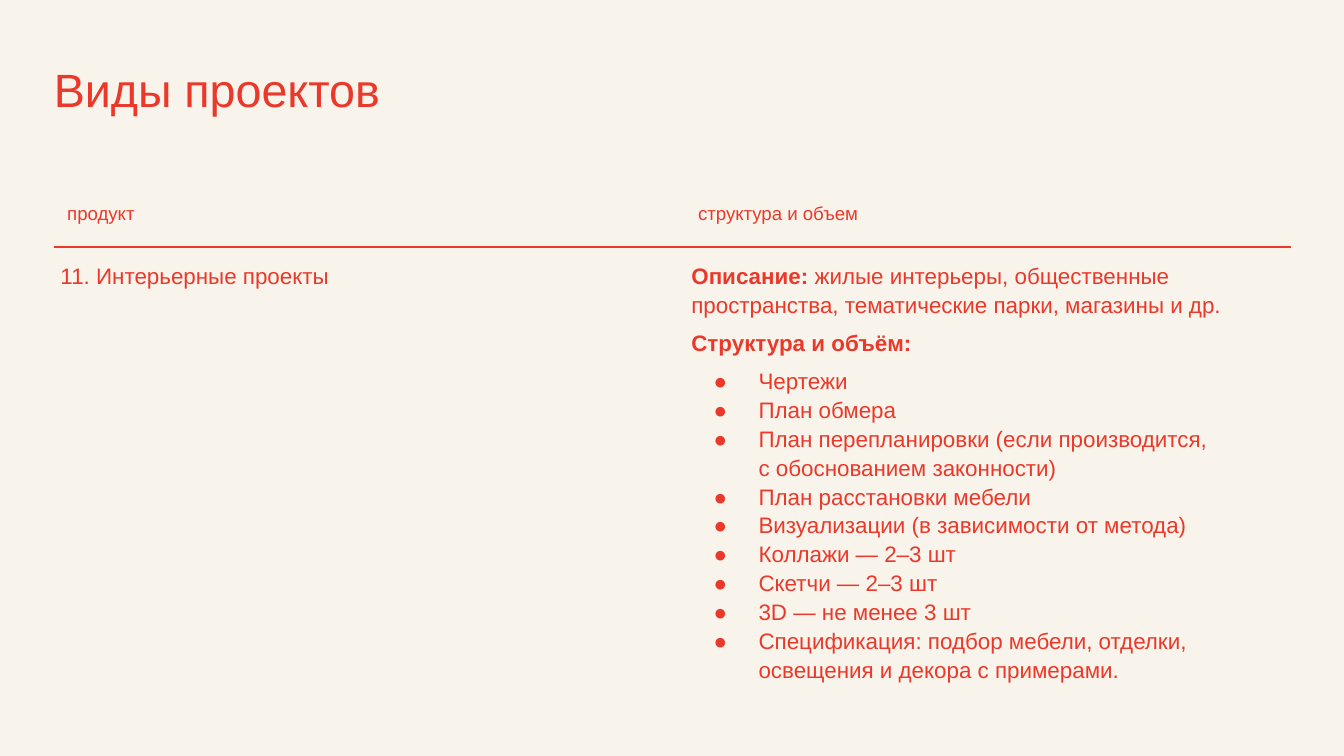
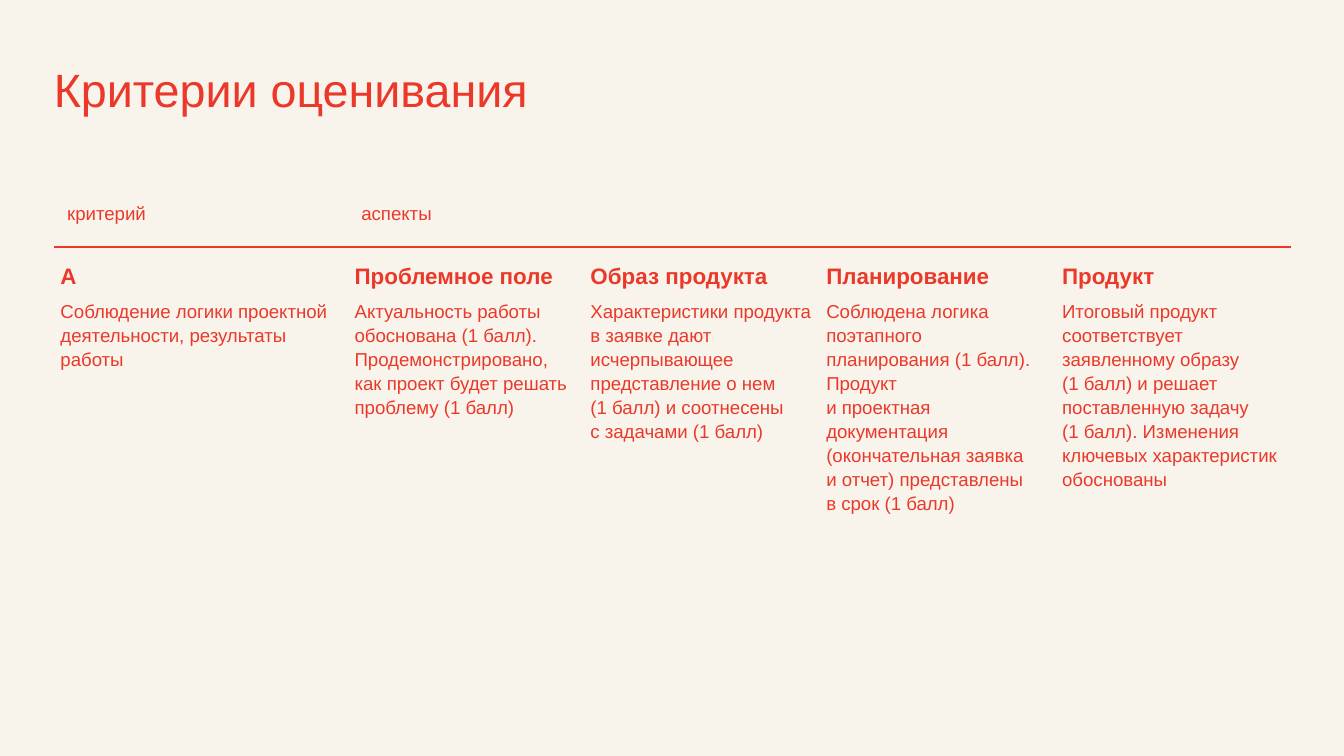
from pptx import Presentation
from pptx.dml.color import RGBColor
from pptx.enum.text import MSO_ANCHOR, MSO_AUTO_SIZE, PP_ALIGN
from pptx.oxml.ns import qn
from pptx.util import Pt
from lxml import etree

TOP = MSO_ANCHOR.TOP
FIXED = MSO_AUTO_SIZE.NONE
LEFT = PP_ALIGN.LEFT

RED = RGBColor(0xEA, 0x39, 0x2A)
CREAM = RGBColor(0xF9, 0xF4, 0xEB)
FONT = "Arial"
PLAIN = "{2D5ABB26-0587-4C30-8999-92F81FD0307C}"
EDGE = 28.8
ROW = 30.4
SPACING = 1.15
GAP = 5

TYPES = [
    "Чертежи",
    "План обмера",
    "План перепланировки (если производится,\nс обоснованием законности)",
    "План расстановки мебели",
    "Визуализации (в зависимости от метода)",
    "Коллажи — 2–3 шт",
    "Скетчи — 2–3 шт",
    "3D — не менее 3 шт",
    "Спецификация: подбор мебели, отделки, освещения и декора с примерами.",
]

ASPECTS = [
    ("А", "Соблюдение логики проектной деятельности, результаты работы"),
    ("Проблемное поле",
     "Актуальность работы обоснована (1 балл). Продемонстрировано, "
     "как проект будет решать проблему (1 балл)"),
    ("Образ продукта",
     "Характеристики продукта в заявке дают исчерпывающее представление о нем\n"
     "(1 балл) и соотнесены\nс задачами (1 балл)"),
    ("Планирование",
     "Соблюдена логика поэтапного планирования (1 балл). Продукт\n"
     "и проектная документация (окончательная заявка\n"
     "и отчет) представлены\nв срок (1 балл)"),
    ("Продукт",
     "Итоговый продукт соответствует заявленному образу\n"
     "(1 балл) и решает поставленную задачу\n"
     "(1 балл). Изменения ключевых характеристик обоснованы"),
]


def add_run(para, text, size, bold=False):
    for i, line in enumerate(text.split("\n")):
        if i:
            para.add_line_break()
        run = para.add_run()
        run.text = line
        font = run.font
        font.name, font.size, font.bold = FONT, Pt(size), bold
        font.color.rgb = RED


def add_para(frame, runs, size, before=0, after=0, spacing=SPACING):
    para = frame.paragraphs[0]
    if para.runs:
        para = frame.add_paragraph()
    para.alignment = LEFT
    para.line_spacing = spacing
    para.space_before, para.space_after = Pt(before), Pt(after)
    for text, bold in runs:
        add_run(para, text, size, bold)
    return para


def add_bullet(para):
    props = para._p.get_or_add_pPr()
    props.set("marL", str(Pt(36)))
    props.set("indent", str(-Pt(24)))
    color = etree.SubElement(props, qn("a:buClr"))
    etree.SubElement(color, qn("a:srgbClr"), val=str(RED))
    etree.SubElement(props, qn("a:buFont"), typeface=FONT)
    etree.SubElement(props, qn("a:buChar"), char="●")


def add_rule(cell, side):
    line = etree.Element(qn(side), w=str(Pt(0.75)))
    fill = etree.SubElement(line, qn("a:solidFill"))
    etree.SubElement(fill, qn("a:srgbClr"), val=str(RED))
    cell._tc.get_or_add_tcPr().insert(0, line)


def add_page(deck, title):
    slide = deck.slides.add_slide(deck.slide_layouts[5])
    slide.background.fill.solid()
    slide.background.fill.fore_color.rgb = CREAM
    box = slide.shapes.title
    box.left, box.top, box.width, box.height = Pt(EDGE), Pt(28), Pt(456.5), Pt(34)
    frame = box.text_frame
    frame.word_wrap, frame.auto_size = True, FIXED
    frame.vertical_anchor = TOP
    frame.margin_left = frame.margin_top = 0
    frame.margin_right = frame.margin_bottom = Pt(7.2)
    add_para(frame, [(title, False)], 25)
    return slide


def add_grid(slide, widths, heads):
    shape = slide.shapes.add_table(
        2, len(widths), Pt(EDGE), Pt(102), Pt(sum(widths)), Pt(2 * ROW))
    table = shape.table
    table.first_row = table.horz_banding = False
    table._tbl.tblPr.find(qn("a:tableStyleId")).text = PLAIN
    for col, width in zip(table.columns, widths):
        col.width = Pt(width)
    for i, row in enumerate(table.rows):
        row.height = Pt(ROW)
        for cell in row.cells:
            cell.fill.background()
            cell.vertical_anchor = TOP
            cell.margin_top = cell.margin_bottom = Pt(7.2)
            cell.margin_left = cell.margin_right = Pt(3.6 if i else 7.2)
            add_rule(cell, "a:lnT" if i else "a:lnB")
    for i, head in enumerate(heads):
        add_para(table.cell(0, i).text_frame, [(head, False)], 10, spacing=1)
    return table


def add_types(deck):
    slide = add_page(deck, "Виды проектов")
    table = add_grid(slide, [338, 325], ["продукт", "структура и объем"])
    add_para(table.cell(1, 0).text_frame,
             [("11. Интерьерные проекты", False)], 12, after=GAP)
    frame = table.cell(1, 1).text_frame
    add_para(frame, [
        ("Описание: ", True),
        ("жилые интерьеры, общественные пространства, "
         "тематические парки, магазины и др.", False)], 12)
    add_para(frame, [("Структура и объём:", True)], 12, before=GAP)
    for i, text in enumerate(TYPES):
        add_bullet(add_para(frame, [(text, False)], 12, before=0 if i else GAP))


def add_marks(deck):
    slide = add_page(deck, "Критерии оценивания")
    table = add_grid(slide, [157.6] + [126.35] * 4, ["критерий", "аспекты"])
    table.cell(0, 1).merge(table.cell(0, 4))
    for i, (name, text) in enumerate(ASPECTS):
        frame = table.cell(1, i).text_frame
        add_para(frame, [(name, True)], 12)
        add_para(frame, [(text, False)], 10, before=GAP, after=GAP)


def main():
    deck = Presentation()
    deck.slide_width, deck.slide_height = Pt(720), Pt(405)
    add_types(deck)
    add_marks(deck)
    deck.save("out.pptx")


if __name__ == "__main__":
    main()
